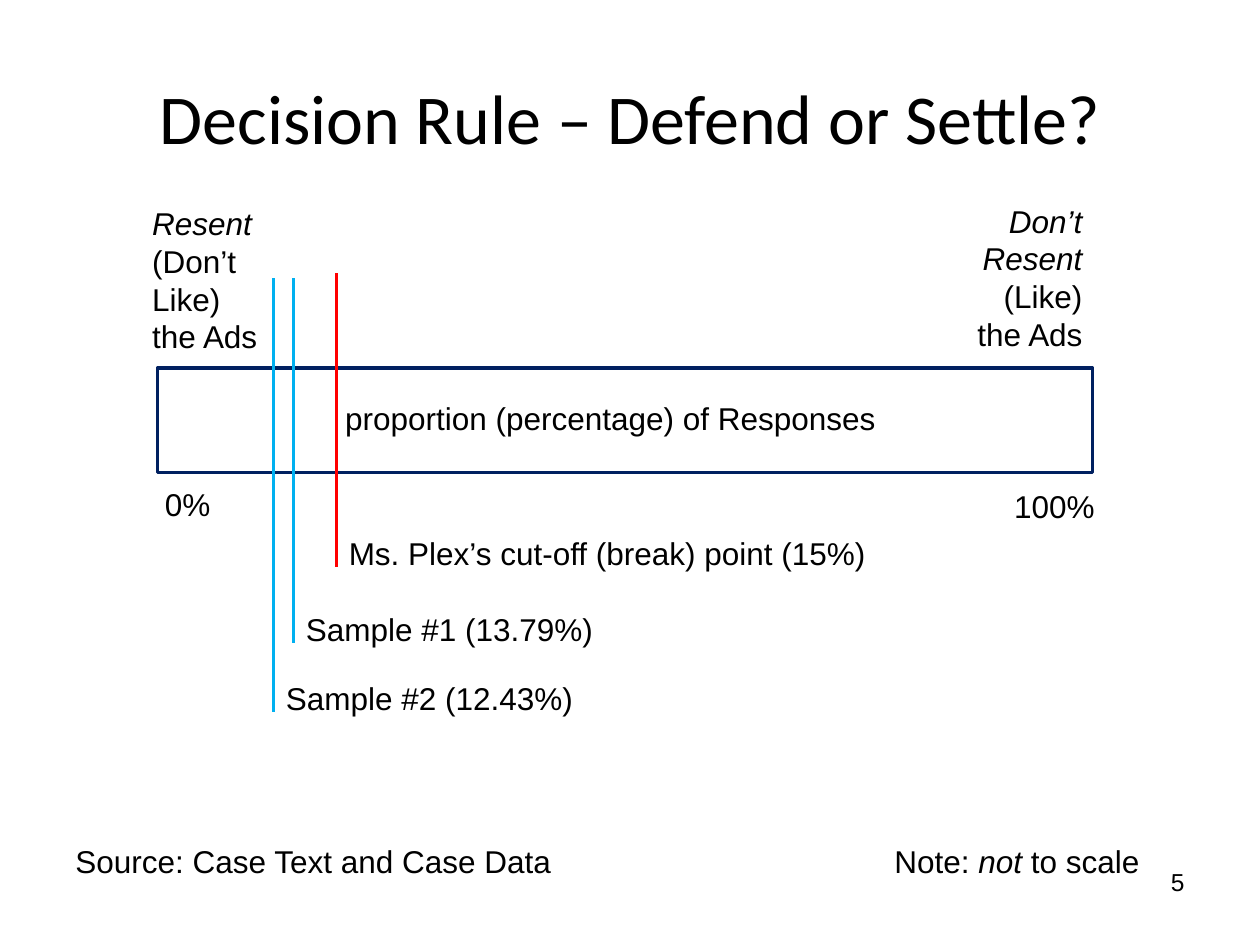
"""Build the decision rule slide with its response scale and sample markers."""
from dataclasses import dataclass

from lxml import etree
from pptx import Presentation
from pptx.dml.color import RGBColor
from pptx.enum.shapes import MSO_CONNECTOR, MSO_SHAPE
from pptx.enum.text import MSO_ANCHOR, MSO_AUTO_SIZE, PP_ALIGN
from pptx.oxml.ns import qn
from pptx.util import Inches, Pt

LEFT, CENTER, RIGHT = PP_ALIGN.LEFT, PP_ALIGN.CENTER, PP_ALIGN.RIGHT
TOP, MIDDLE = MSO_ANCHOR.TOP, MSO_ANCHOR.MIDDLE
FIT = MSO_AUTO_SIZE.SHAPE_TO_FIT_TEXT
RECT, STRAIGHT = MSO_SHAPE.RECTANGLE, MSO_CONNECTOR.STRAIGHT


@dataclass(frozen=True)
class Theme:
    ink: RGBColor = RGBColor(0, 0, 0)
    paper: RGBColor = RGBColor(255, 255, 255)
    navy: RGBColor = RGBColor(0x00, 0x20, 0x60)
    red: RGBColor = RGBColor(0xFF, 0x00, 0x00)
    blue: RGBColor = RGBColor(0x00, 0xB0, 0xF0)
    heading_font: str = "Calibri"
    body_font: str = "Arial"
    title: int = 40
    body: int = 18
    number: int = 14
    stroke: int = 2


class SlideBuilder:
    def __init__(self, slide, theme):
        self.s, self.theme = slide, theme

    def text(self, box, paragraphs, align=LEFT, size=None, font=None, anchor=TOP, wrap=False):
        tb = self.s.shapes.add_textbox(*map(Inches, box))
        tf = tb.text_frame
        tf.word_wrap, tf.vertical_anchor = wrap, anchor
        if not wrap:
            tf.auto_size = FIT
        for i, runs in enumerate(paragraphs):
            p = tf.paragraphs[0] if i == 0 else tf.add_paragraph()
            p.alignment = align
            for words, italic in runs:
                r = p.add_run()
                r.text = words
                r.font.name = font or self.theme.body_font
                r.font.size = Pt(size or self.theme.body)
                r.font.italic = italic
                r.font.color.rgb = self.theme.ink

    def label(self, left, top, width, words):
        self.text((left, top, width, 0.4), [[(words, False)]])

    def bar(self, box):
        sp = self.s.shapes.add_shape(RECT, *map(Inches, box))
        sp.shadow.inherit = False
        sp.fill.solid()
        sp.fill.fore_color.rgb = self.theme.paper
        sp.line.color.rgb = self.theme.navy
        sp.line.width = Pt(self.theme.stroke)

    def marker(self, x, top, bottom, color):
        line = self.s.shapes.add_connector(STRAIGHT, *map(Inches, (x, top, x, bottom)))
        line.line.color.rgb = color
        line.line.width = Pt(self.theme.stroke)
        etree.SubElement(line._element.spPr, qn("a:effectLst"))


def main():
    prs = Presentation()
    prs.slide_width, prs.slide_height = Inches(10), Inches(7.5)
    theme = Theme()
    b = SlideBuilder(prs.slides.add_slide(prs.slide_layouts[6]), theme)

    b.text((0.5, 0.3, 9, 1.25), [[("Decision Rule – Defend or Settle?", False)]],
           CENTER, theme.title, theme.heading_font, MIDDLE, True)
    b.text((7.17, 6.83, 2.33, 0.52), [[("5", False)]], RIGHT, theme.number, wrap=True)

    b.bar((1.25, 2.92, 7.42, 0.83))
    b.text((1.11, 1.57, 1.04, 1.31),
           [[("Resent", True)], [("(Don’t", False)], [("Like)", False)], [("the Ads", False)]])
    b.text((7.65, 1.55, 1.04, 1.31),
           [[("Don’t", True)], [("Resent", True)], [("(Like)", False)], [("the Ads", False)]],
           RIGHT)
    b.label(2.64, 3.12, 4.45, "proportion (percentage) of Responses")
    b.label(1.21, 3.8, 0.57, "0%")
    b.label(7.95, 3.82, 0.85, "100%")

    markers = [
        (2.67, 2.17, 4.5, theme.red, 4.34, "Ms. Plex’s cut-off (break) point (15%)"),
        (2.33, 2.21, 5.1, theme.blue, 2.5, "Sample #1 (13.79%)"),
        (2.17, 2.21, 5.65, theme.blue, 2.5, "Sample #2 (12.43%)"),
    ]
    for x, top, bottom, color, width, words in markers:
        b.marker(x, top, bottom, color)
        b.label(x, bottom - 0.31, width, words)

    b.label(0.5, 6.63, 4.01, "Source: Case Text and Case Data")
    b.text((7, 6.63, 2.17, 0.4), [[("Note: ", False), ("not", True), (" to scale", False)]])
    prs.save("out.pptx")


if __name__ == "__main__":
    main()
